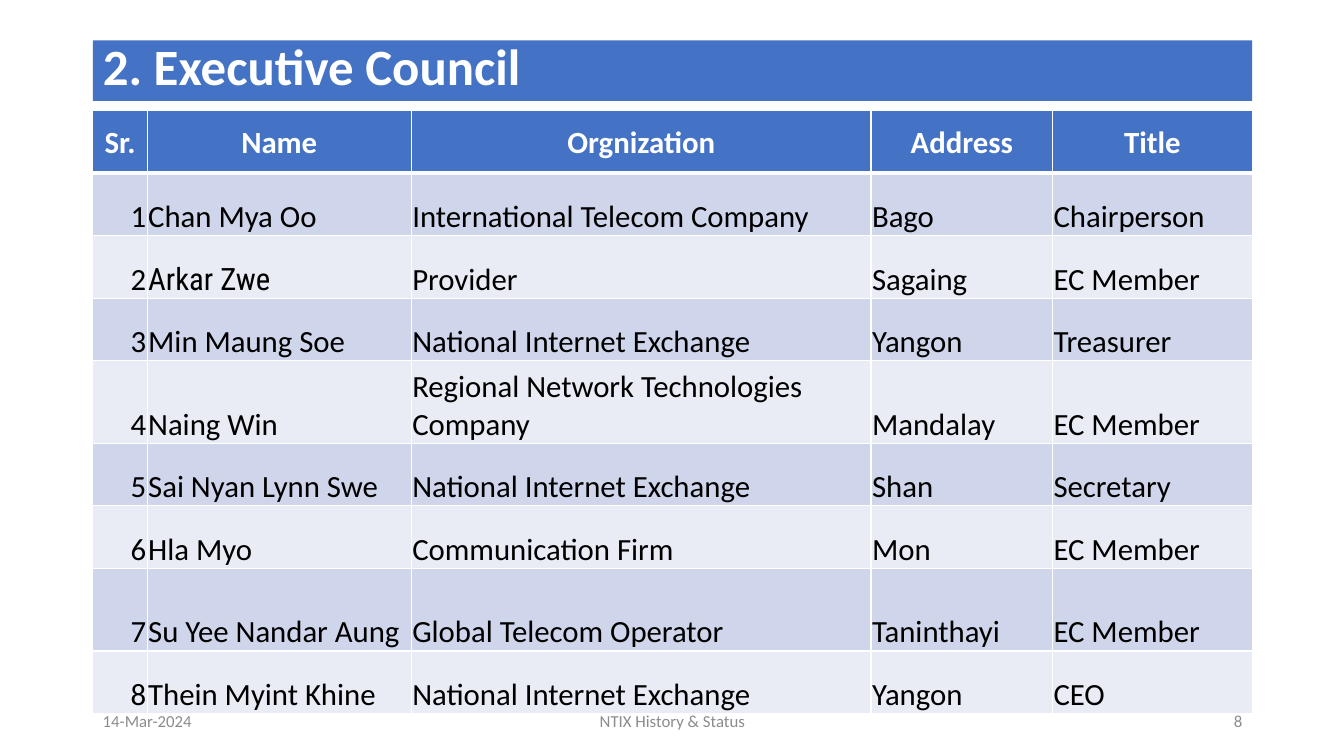
import pptx
import pptx.util
import pptx.dml.color
import pptx.enum.text
from lxml import etree
from pptx.oxml import ns

Inches, Pt = pptx.util.Inches, pptx.util.Pt
RGBColor = pptx.dml.color.RGBColor
ALIGN, ANCHOR = pptx.enum.text.PP_ALIGN, pptx.enum.text.MSO_ANCHOR

BLUE = RGBColor(0x44, 0x72, 0xC4)
WHITE = RGBColor(0xFF, 0xFF, 0xFF)
BLACK = RGBColor(0, 0, 0)
GREY = RGBColor(0x8C, 0x8C, 0x8C)
BANDS = [RGBColor(0xCF, 0xD5, 0xEA), RGBColor(0xE9, 0xEB, 0xF5)]

BODY_FONT = "Calibri"
NAME_FONTS = {"Arkar Zwe": "Roboto Condensed"}
LEFT, WIDTH = 0.92, 11.5
COLUMN_WIDTHS = [0.54, 2.62, 4.56, 1.8, 1.98]
ROW_HEIGHT, TALL_ROW_HEIGHT = 0.62, 0.82
TALL_ROWS = {4, 7}

HEADINGS = ["Sr.", "Name", "Orgnization", "Address", "Title"]
EXCHANGE = "National Internet Exchange"
MEMBERS = [
    ("Chan Mya Oo", "International Telecom Company", "Bago", "Chairperson"),
    ("Arkar Zwe", "Provider", "Sagaing", "EC Member"),
    ("Min Maung Soe", EXCHANGE, "Yangon", "Treasurer"),
    ("Naing Win", "Regional Network Technologies Company", "Mandalay", "EC Member"),
    ("Sai Nyan Lynn Swe", EXCHANGE, "Shan", "Secretary"),
    ("Hla Myo", "Communication Firm", "Mon", "EC Member"),
    ("Su Yee Nandar Aung", "Global Telecom Operator", "Taninthayi", "EC Member"),
    ("Thein Myint Khine", EXCHANGE, "Yangon", "CEO"),
]


def write(frame, text, size, color, align=ALIGN.LEFT, bold=False, font=BODY_FONT):
    paragraph = frame.paragraphs[0]
    paragraph.alignment = align
    run = paragraph.add_run()
    run.text = text
    run.font.name = font
    run.font.size = Pt(size)
    run.font.bold = bold
    run.font.color.rgb = color
    return paragraph


def add_title(slide, text):
    title = slide.shapes.title
    title.left, title.top = Inches(LEFT), Inches(0.4)
    title.width, title.height = Inches(WIDTH), Inches(0.6)
    title.fill.solid()
    title.fill.fore_color.rgb = BLUE
    frame = title.text_frame
    frame.word_wrap = True
    frame.auto_size = pptx.enum.text.MSO_AUTO_SIZE.NONE
    frame.vertical_anchor = ANCHOR.MIDDLE
    write(frame, text, 36.3, WHITE, bold=True).line_spacing = 0.8


def add_footer(slide, left, width, text, align):
    footer = slide.shapes.add_textbox(Inches(left), Inches(6.95), Inches(width), Inches(0.4))
    footer.text_frame.word_wrap = True
    footer.text_frame.vertical_anchor = ANCHOR.MIDDLE
    write(footer.text_frame, text, 12, GREY, align)


def add_borders(cell, top, bottom):
    properties = cell._tc.get_or_add_tcPr()
    for side, points in (("L", 1), ("R", 1), ("T", top), ("B", bottom)):
        line = etree.SubElement(properties, ns.qn(f"a:ln{side}"), w=str(Pt(points)))
        fill = etree.SubElement(line, ns.qn("a:solidFill"))
        etree.SubElement(fill, ns.qn("a:srgbClr"), val=str(WHITE))


def format_cell(cell, fill, anchor, top=1, bottom=1):
    add_borders(cell, top, bottom)
    cell.fill.solid()
    cell.fill.fore_color.rgb = fill
    cell.vertical_anchor = anchor
    cell.margin_left = cell.margin_right = cell.margin_top = Inches(0.01)
    cell.margin_bottom = 0


def add_council_table(slide):
    heights = [TALL_ROW_HEIGHT if row in TALL_ROWS else ROW_HEIGHT
               for row in range(len(MEMBERS) + 1)]
    council = slide.shapes.add_table(
        len(heights), len(HEADINGS), Inches(LEFT), Inches(1.1),
        Inches(WIDTH), Inches(sum(heights))).table
    for column, width in zip(council.columns, COLUMN_WIDTHS):
        column.width = Inches(width)
    for row, height in zip(council.rows, heights):
        row.height = Inches(height)

    # Heading row
    for column, heading in enumerate(HEADINGS):
        cell = council.cell(0, column)
        format_cell(cell, BLUE, ANCHOR.MIDDLE, bottom=3)
        write(cell.text_frame, heading, 22, WHITE, ALIGN.CENTER, bold=True)

    # Numbered member rows
    for number, member in enumerate(MEMBERS, 1):
        for column, text in enumerate((str(number), *member)):
            cell = council.cell(number, column)
            format_cell(cell, BANDS[(number - 1) % 2], ANCHOR.BOTTOM,
                        top=3 if number == 1 else 1)
            write(cell.text_frame, text, 22, BLACK,
                  ALIGN.RIGHT if column == 0 else ALIGN.LEFT,
                  font=NAME_FONTS.get(text, BODY_FONT))


def main():
    deck = pptx.Presentation()
    deck.slide_width, deck.slide_height = Inches(13.33), Inches(7.5)
    slide = deck.slides.add_slide(deck.slide_layouts[5])

    add_title(slide, "2. Executive Council")

    # Date, deck name and page number
    add_footer(slide, LEFT, 3, "14-Mar-2024", ALIGN.LEFT)
    add_footer(slide, 4.42, 4.5, "NTIX History & Status", ALIGN.CENTER)
    add_footer(slide, 9.42, 3, "8", ALIGN.RIGHT)

    add_council_table(slide)
    deck.save("out.pptx")


if __name__ == "__main__":
    main()
